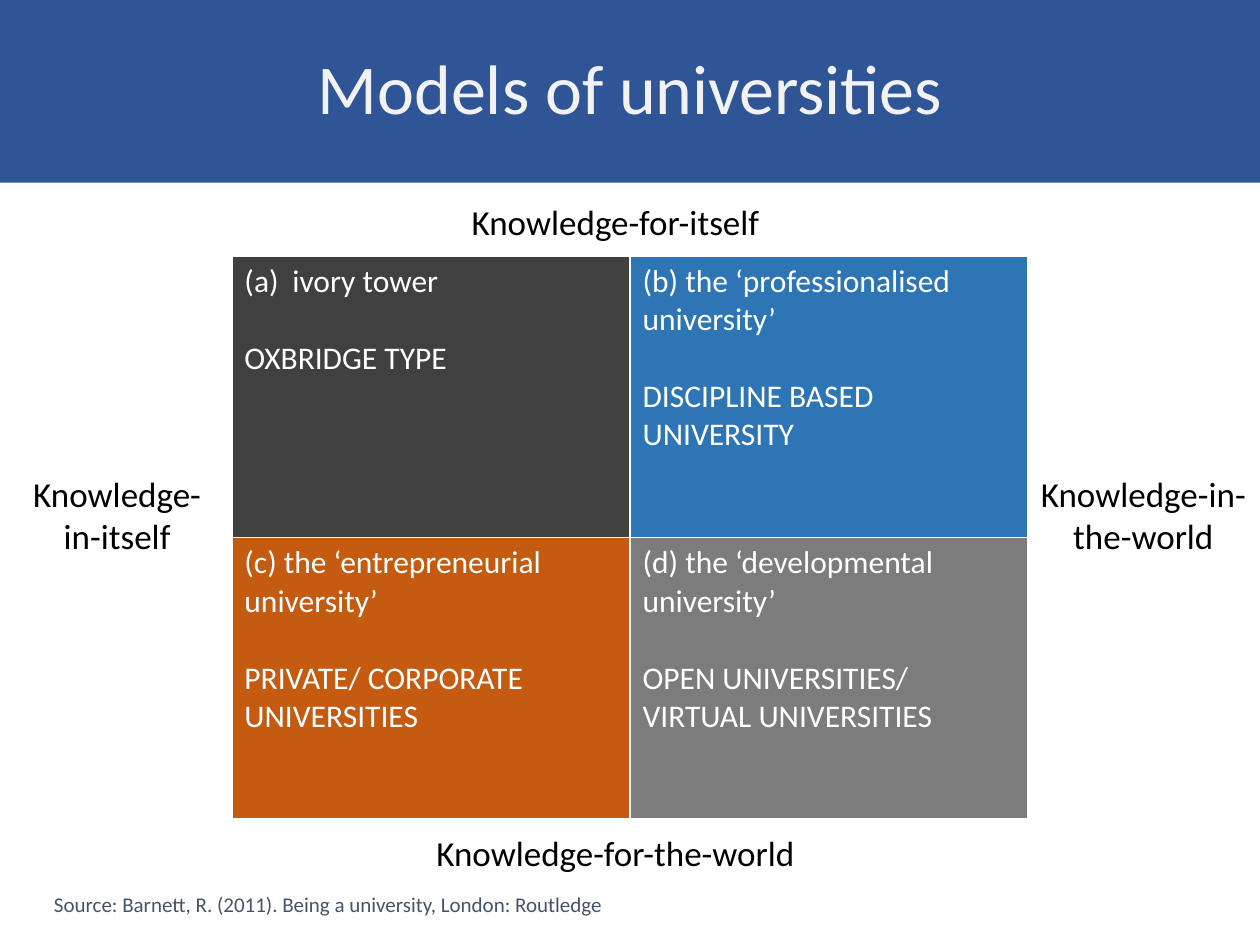
from lxml import etree
from pptx import Presentation
from pptx import util as u
from pptx.dml.color import RGBColor
from pptx.enum import shapes, text
from pptx.oxml import ns

WHITE = "FFFFFF"


def colour(hex_value):
    return RGBColor.from_string(hex_value)


class SlideBuilder:
    font = "Calibri"

    def __init__(self, s):
        self.s = s

    def add_text(self, p, content, size, fill, **formats):
        """Put one styled run in a paragraph."""
        for name, value in formats.items():
            setattr(p, name, value)
        r = p.add_run()
        r.text = content
        for name, value in {"name": self.font, "size": u.Pt(size)}.items():
            setattr(r.font, name, value)
        r.font.color.rgb = colour(fill)

    def banner(self, box, content, fill):
        sp = self.s.shapes.add_shape(
            shapes.MSO_SHAPE.RECTANGLE, *map(u.Inches, box))
        sp.shadow.inherit = False
        sp.fill.solid()
        sp.fill.fore_color.rgb = colour(fill)
        sp.line.fill.background()
        tf = sp.text_frame
        tf.vertical_anchor = text.MSO_ANCHOR.MIDDLE
        self.add_text(tf.paragraphs[0], content, 40, "F2F2F2",
                      alignment=text.PP_ALIGN.CENTER, line_spacing=0.9)

    def label(self, box, content, size=20, fill="000000",
              align=text.PP_ALIGN.CENTER, wrap=True):
        tf = self.s.shapes.add_textbox(*map(u.Inches, box)).text_frame
        tf.word_wrap = wrap
        self.add_text(tf.paragraphs[0], content, size, fill, alignment=align)

    def number(self, p):
        """Number a paragraph (a), (b), ... with a hanging indent."""
        pPr = p._p.get_or_add_pPr()
        indent = u.Inches(0.38)
        pPr.set("marL", str(indent))
        pPr.set("indent", str(-indent))
        etree.SubElement(pPr, ns.qn("a:buFont"), typeface="+mj-lt")
        etree.SubElement(pPr, ns.qn("a:buAutoNum"), type="alphaLcParenBoth")

    def border(self, cell, sides):
        """Draw thin white lines; they must precede the cell's fill."""
        tcPr = cell._tc.get_or_add_tcPr()
        for i, side in enumerate(sides):
            ln = etree.Element(ns.qn("a:ln" + side), w=str(u.Pt(1)))
            solid = etree.SubElement(ln, ns.qn("a:solidFill"))
            etree.SubElement(solid, ns.qn("a:srgbClr"), val=WHITE)
            tcPr.insert(i, ln)

    def matrix(self, box, rows):
        table = self.s.shapes.add_table(
            len(rows), len(rows[0]), *map(u.Inches, box)).table
        table.first_row = table.horz_banding = False
        for i, row in enumerate(rows):
            for j, (kind, example, fill, numbered) in enumerate(row):
                cell = table.cell(i, j)
                cell.fill.solid()
                cell.fill.fore_color.rgb = colour(fill)
                # Only the sides that face another cell, in schema order
                self.border(cell, ("L" if j else "R") + ("T" if i else "B"))
                tf = cell.text_frame
                p = tf.paragraphs[0]
                if numbered:
                    self.number(p)
                self.add_text(p, kind, 18, WHITE)
                self.add_text(tf.add_paragraph(), example, 18, WHITE,
                              space_before=u.Pt(22))


def main():
    prs = Presentation()
    prs.slide_width, prs.slide_height = u.Inches(10), u.Inches(7.5)
    b = SlideBuilder(prs.slides.add_slide(prs.slide_layouts[6]))

    # Title
    b.banner((0, 0, 10, 1.45), "Models of universities", "2F5597")

    # Four models of university
    b.matrix((1.84, 2.03, 6.32, 4.47), [
        [("ivory tower", "OXBRIDGE TYPE", "404040", True),
         ("(b) the ‘professionalised university’",
          "DISCIPLINE BASED UNIVERSITY", "2E75B6", False)],
        [("(c) the ‘entrepreneurial university’",
          "PRIVATE/ CORPORATE UNIVERSITIES", "C55A11", False),
         ("(d) the ‘developmental university’",
          "OPEN UNIVERSITIES/ VIRTUAL UNIVERSITIES", "7C7C7C", False)],
    ])

    # Axis labels around the matrix
    for box, content in [
        ((3.13, 1.54, 3.51, 0.44), "Knowledge-for-itself"),
        ((0.06, 3.7, 1.74, 0.77), "Knowledge-in-itself"),
        ((8.11, 3.7, 1.93, 0.77), "Knowledge-in-the-world"),
        ((3.07, 6.55, 3.63, 0.44), "Knowledge-for-the-world"),
    ]:
        b.label(box, content)

    # Source
    b.label((0.33, 7.03, 4.68, 0.3),
            "Source: Barnett, R. (2011). Being a university, London: Routledge",
            size=12, fill="44546A", align=text.PP_ALIGN.LEFT, wrap=False)

    prs.save("out.pptx")


if __name__ == "__main__":
    main()
